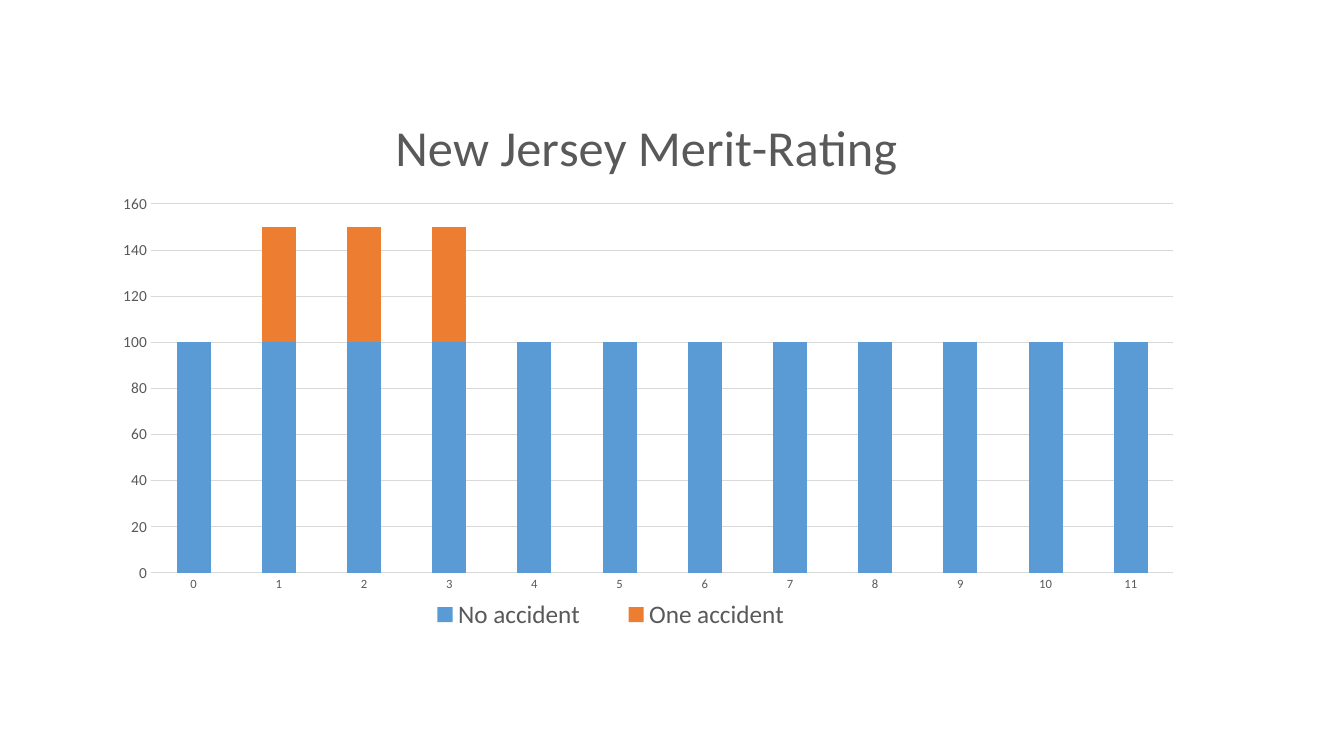
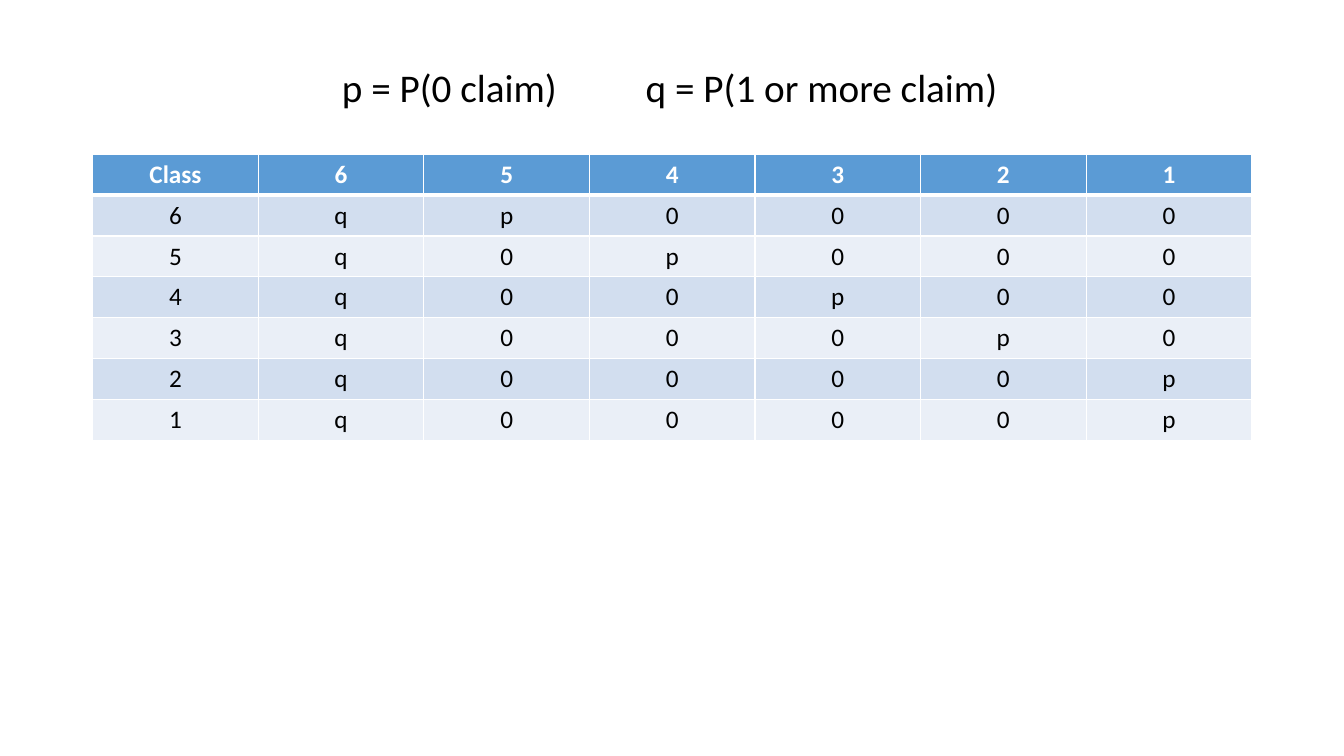
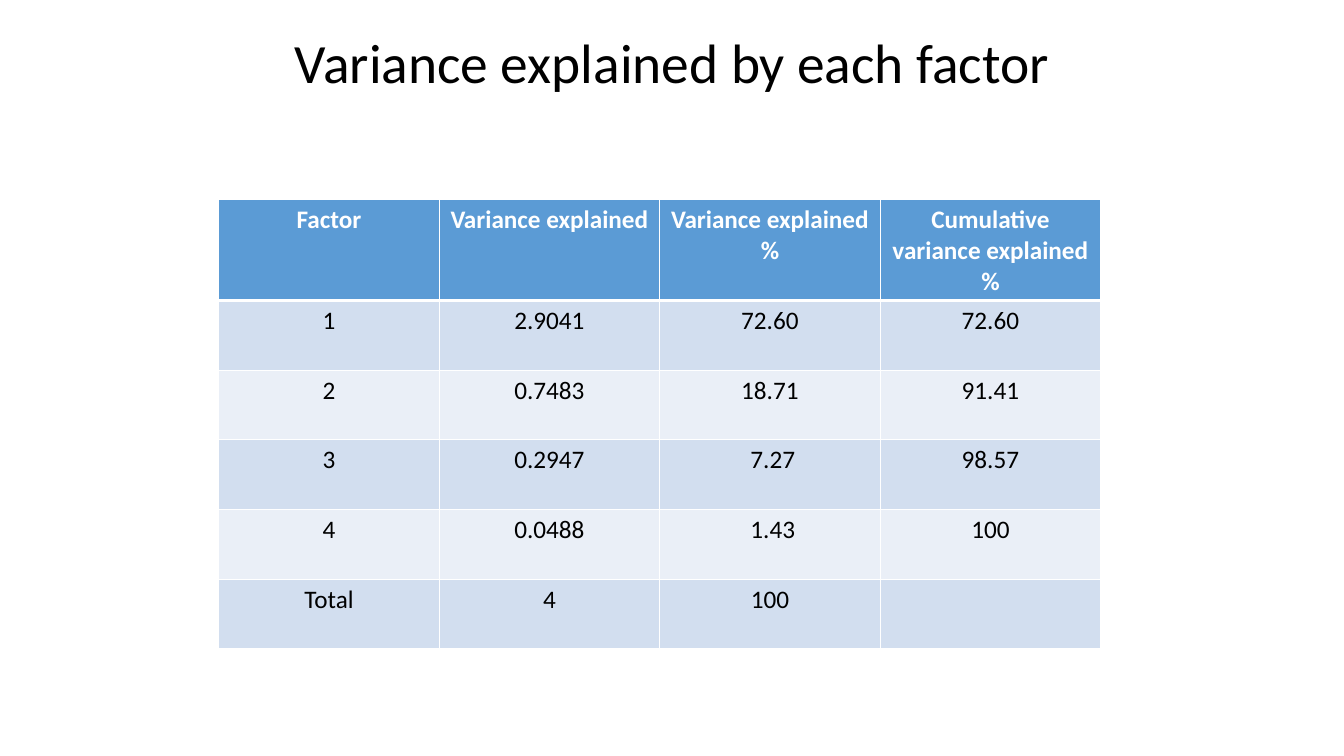
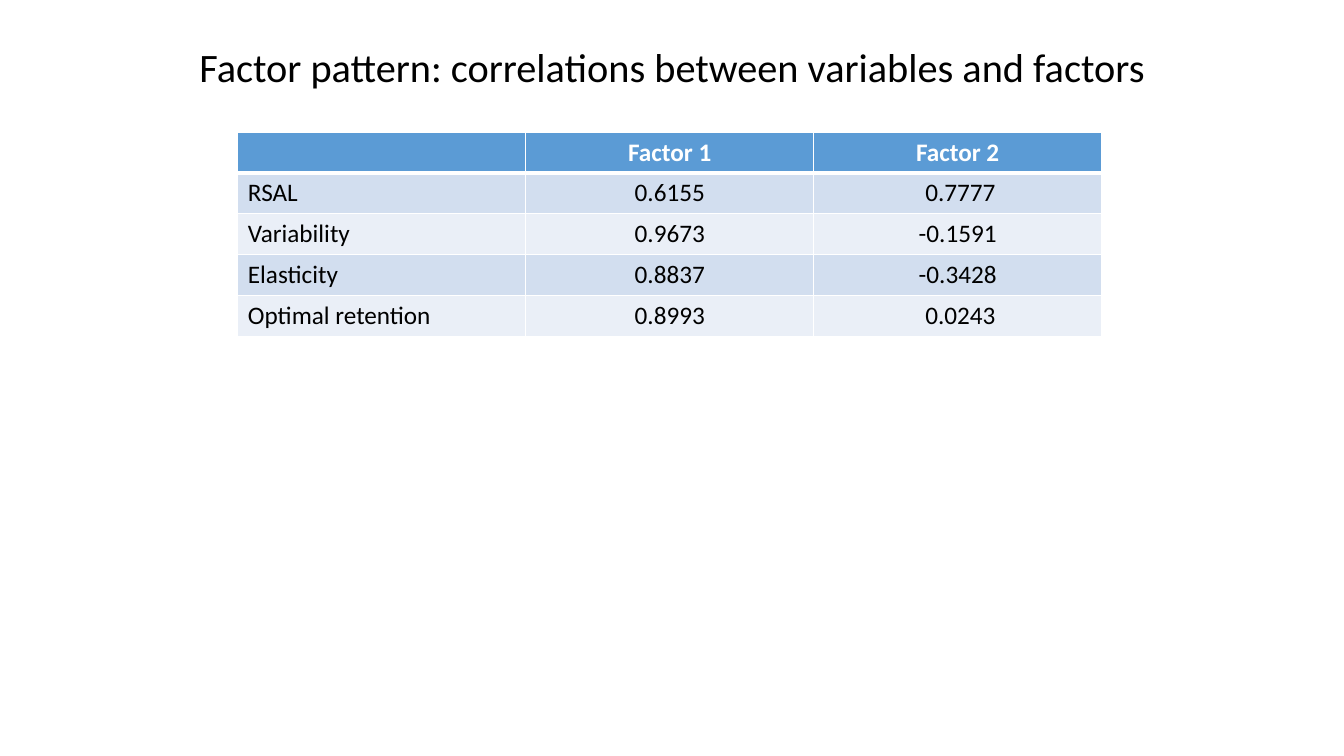
from lxml import etree
from pptx import Presentation
from pptx.chart.data import CategoryChartData
from pptx.dml.color import RGBColor
from pptx.enum.chart import XL_CHART_TYPE, XL_LEGEND_POSITION, XL_TICK_MARK
from pptx.enum.text import MSO_ANCHOR, PP_ALIGN
from pptx.oxml import parse_xml
from pptx.oxml.ns import nsdecls, qn
from pptx.util import Pt

LEFT, CENTER = PP_ALIGN.LEFT, PP_ALIGN.CENTER
MIDDLE = MSO_ANCHOR.MIDDLE
STACKED = XL_CHART_TYPE.COLUMN_STACKED
BOTTOM = XL_LEGEND_POSITION.BOTTOM
NO_TICK = XL_TICK_MARK.NONE

FONT = "Calibri"
BLACK, WHITE, GREY, RULE = "000000", "FFFFFF", "595959", "D9D9D9"
BLUE, ORANGE = "5B9BD5", "ED7D31"
BANDS = ["EAEFF7", "D2DEEF"]


def rgb(hex_color):
    return RGBColor.from_string(hex_color)


def style(font, size, color, bold=False):
    font.name = FONT
    font.size = Pt(size)
    font.bold = bold
    font.color.rgb = rgb(color)


prs = Presentation()
prs.slide_width, prs.slide_height = Pt(960), Pt(540)
blank = prs.slide_layouts[6]

# Slide 1: stacked column chart
s = prs.slides.add_slide(blank)
data = CategoryChartData()
data.categories = [str(n) for n in range(12)]
data.add_series("No accident", [100] * 12)
data.add_series("One accident", [0] + [50] * 3 + [0] * 8)
chart = s.shapes.add_chart(STACKED, Pt(72.72), Pt(53.28), Pt(781.92), Pt(412.56), data).chart
style(chart.font, 10, BLACK)

plot = chart.plots[0]
plot.gap_width, plot.overlap = 150, 100
plot.vary_by_categories = False
for series, color in zip(plot.series, [BLUE, ORANGE]):
    series.format.fill.solid()
    series.format.fill.fore_color.rgb = rgb(color)

# Axes
cat_axis, val_axis = chart.category_axis, chart.value_axis
for axis, size in [(cat_axis, 9), (val_axis, 11)]:
    axis.major_tick_mark = axis.minor_tick_mark = NO_TICK
    style(axis.tick_labels.font, size, GREY)
val_axis.minimum_scale, val_axis.maximum_scale, val_axis.major_unit = 0, 160, 20
val_axis.format.line.fill.background()
for line in [cat_axis.format.line, val_axis.major_gridlines.format.line]:
    line.color.rgb = rgb(RULE)
    line.width = Pt(0.75)

# Chart title and legend
chart.has_title = True
tf = chart.chart_title.text_frame
tf.text = "New Jersey Merit-Rating"
style(tf.paragraphs[0].runs[0].font, 36, GREY)
chart.has_legend = True
legend = chart.legend
legend.position = BOTTOM
legend.include_in_layout = False
style(legend.font, 18, GREY)

# Places of the chart parts, as fractions of the chart
parts = [
    (chart.chart_title._element, 1, dict(x=0.26, y=0.05)),
    (legend._element, 1, dict(x=0.27, y=0.9, w=0.39, h=0.07)),
    (chart._chartSpace.chart.plotArea, 0, dict(x=0.045, y=0.224, w=0.934, h=0.639)),
]
for element, index, place in parts:
    for old in element.findall(qn("c:layout")):
        element.remove(old)
    layout = parse_xml(f"<c:layout {nsdecls('c')}><c:manualLayout/></c:layout>")
    manual = layout[0]
    if index == 0:
        etree.SubElement(manual, qn("c:layoutTarget")).set("val", "inner")
    for key in "xy":
        etree.SubElement(manual, qn(f"c:{key}Mode")).set("val", "edge")
    for key, value in place.items():
        etree.SubElement(manual, qn(f"c:{key}")).set("val", str(value))
    element.insert(index, layout)

# Table contents
classes = [6, 5, 4, 3, 2, 1]
class_rows = [["Class"] + [str(c) for c in classes]]
for c in classes:
    better = max(c - 1, 1)
    class_rows.append([str(c), "q"] + ["p" if k == better else "0" for k in classes[1:]])

variance_rows = [
    ["Factor", "Variance explained", "Variance explained %", "Cumulative variance explained %"],
    ["1", "2.9041", "72.60", "72.60"],
    ["2", "0.7483", "18.71", "91.41"],
    ["3", "0.2947", " 7.27", "98.57"],
    ["4", "0.0488", " 1.43", "100"],
    ["Total", "4", "100", ""],
]
pattern_rows = [
    ["", "Factor 1", "Factor 2"],
    ["RSAL", "0.6155", " 0.7777"],
    ["Variability", "0.9673", "-0.1591"],
    ["Elasticity", "0.8837", "-0.3428"],
    ["Optimal retention", "0.8993", " 0.0243"],
]

# Slides 2 to 4: title, title size, title height, table place, rows, first column
table_slides = [
    ("p = P(0 claim)\tq = P(1 or more claim)", 28, 71.28,
     (66.24, 110.16, 828, 204.48), class_rows, CENTER),
    ("Variance explained by each factor", 39.6, 36,
     (156.24, 142.56, 630, 298.8), variance_rows, CENTER),
    ("Factor pattern: correlations between variables and factors", 28.8, 41.04,
     (169.92, 94.32, 617.04, 146.16), pattern_rows, LEFT),
]
for title, size, height, place, rows, first_align in table_slides:
    s = prs.slides.add_slide(blank)

    # Title
    tf = s.shapes.add_textbox(Pt(66.24), Pt(28.8), Pt(828), Pt(height)).text_frame
    tf.word_wrap = True
    tf.vertical_anchor = MIDDLE
    p = tf.paragraphs[0]
    p.text = title
    p.alignment = CENTER
    p.line_spacing = 0.9
    style(p.runs[0].font, size, BLACK)
    if "\t" in title:
        # Two formulas on one line, the second at a tab stop
        p.alignment = LEFT
        tf.margin_left = Pt(178)
        tabs = etree.SubElement(p._p.get_or_add_pPr(), qn("a:tabLst"))
        etree.SubElement(tabs, qn("a:tab"), pos=str(Pt(217)), algn="l")

    # Table
    table = s.shapes.add_table(len(rows), len(rows[0]), *[Pt(v) for v in place]).table
    for i, row in enumerate(rows):
        for j, text in enumerate(row):
            cell = table.cell(i, j)
            cell.fill.solid()
            cell.fill.fore_color.rgb = rgb(BANDS[i % 2] if i else BLUE)
            p = cell.text_frame.paragraphs[0]
            p.text = text
            p.alignment = CENTER if j or i == 0 else first_align
            style(p.font, 18, BLACK if i else WHITE, i == 0)
            for r in p.runs:
                style(r.font, 18, BLACK if i else WHITE, i == 0)

            # White borders, thicker under the header
            for k, side in enumerate("LRTB"):
                thick = (i, side) in [(0, "B"), (1, "T")]
                cell._tc.get_or_add_tcPr().insert(k, parse_xml(
                    f'<a:ln{side} {nsdecls("a")} w="{Pt(3 if thick else 1)}"><a:solidFill>'
                    f'<a:srgbClr val="{WHITE}"/></a:solidFill></a:ln{side}>'))

prs.save("out.pptx")
